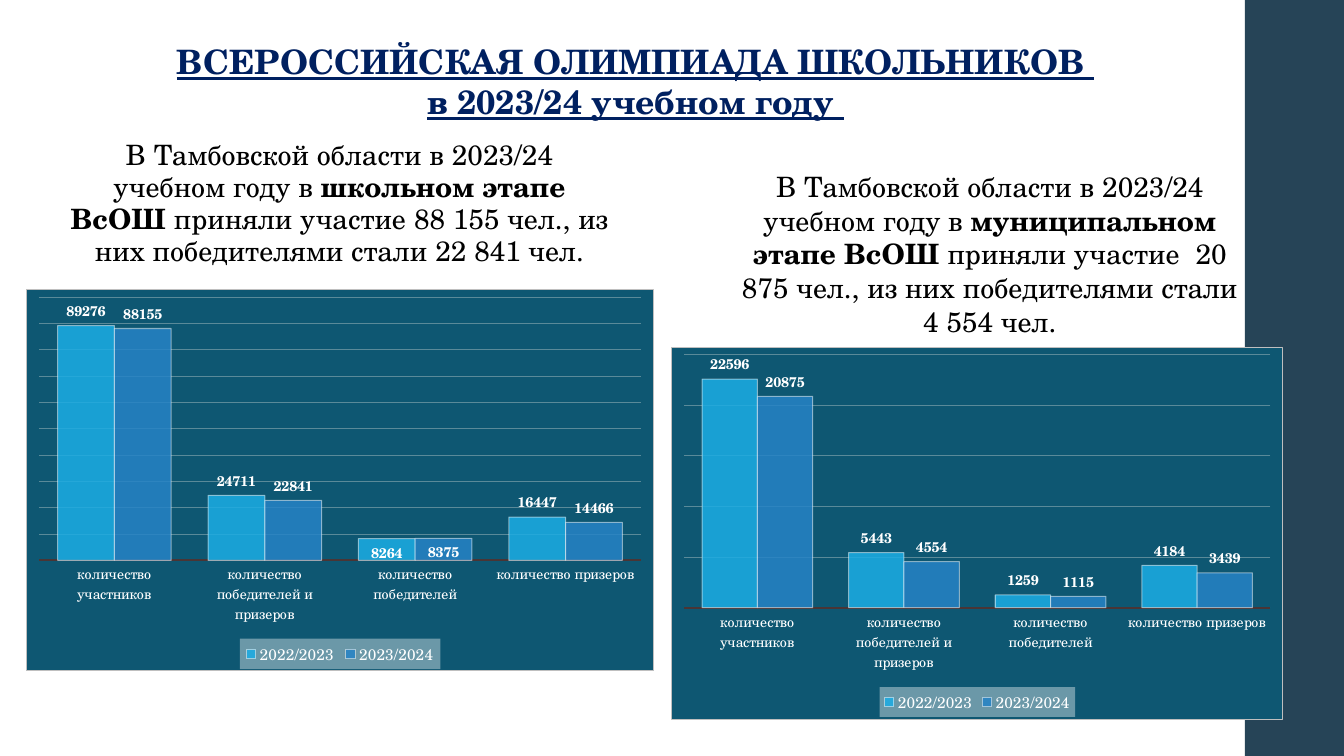
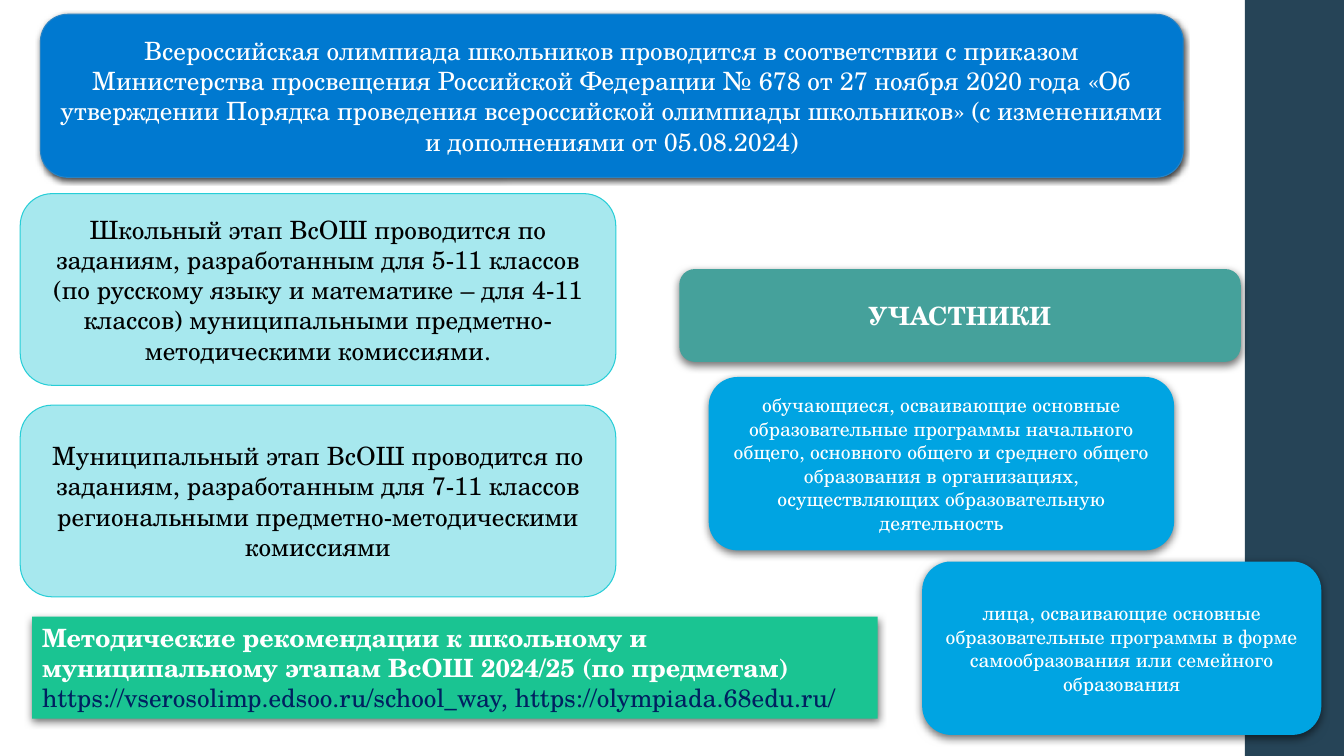
"""Build two slides about the school olympiad: results charts and the rules of the stages."""
from dataclasses import dataclass
from typing import Optional

from lxml.etree import SubElement
from pptx import Presentation
from pptx.chart.data import CategoryChartData
from pptx.dml.color import RGBColor
from pptx.enum.chart import XL_CHART_TYPE, XL_LABEL_POSITION, XL_LEGEND_POSITION, XL_TICK_MARK
from pptx.enum.shapes import MSO_SHAPE
from pptx.enum.text import MSO_ANCHOR, PP_ALIGN
from pptx.oxml import parse_xml
from pptx.oxml.ns import nsdecls, qn
from pptx.util import Cm, Pt

FONT = "TeX Gyre Schola"
WHITE, BLACK, NAVY = "FFFFFF", "000000", "002060"
BAND, PANEL, GRID, AXIS, BORDER = "264457", "0E5772", "5A8A99", "4A3535", "BFBFBF"
STAGE_FILL, STAGE_LINE = "A7E8EE", "27CED7"
ORDER_FILL, ORDER_LINE = "0079D0", "2683C6"
HEADING_FILL, GROUP_FILL, LINKS_FILL = "45A19B", "00A4E2", "1AC492"
SERIES_COLORS = ("1CADE4", "2683C6")
YEARS = ("2022/2023", "2023/2024")
CATEGORIES = (
    "количество участников",
    "количество победителей и призеров",
    "количество победителей",
    "количество призеров",
)


@dataclass(frozen=True)
class Area:
    """Place and size in centimetres."""
    left: float
    top: float
    width: float
    height: float

    def lengths(self):
        """Return the four values as lengths."""
        return Cm(self.left), Cm(self.top), Cm(self.width), Cm(self.height)


@dataclass(frozen=True)
class Span:
    """A run of text with one look."""
    text: str
    size: float = 18
    color: str = WHITE
    bold: bool = False
    underline: bool = False


@dataclass(frozen=True)
class Shadow:
    """A soft shadow that falls straight down, in points and percent."""
    opacity: int = 55
    blur: float = 6
    distance: float = 2


@dataclass(frozen=True)
class Card:
    """A filled shape with paragraphs of spans."""
    area: Area
    fill: str
    paragraphs: tuple = ()
    line: Optional[str] = None
    shadow: Optional[Shadow] = None
    shape: MSO_SHAPE = MSO_SHAPE.ROUNDED_RECTANGLE
    align: PP_ALIGN = PP_ALIGN.CENTER


@dataclass(frozen=True)
class Stage:
    """Results of one olympiad stage and the frame of its chart."""
    area: Area
    values: tuple
    maximum: int
    step: int
    plot_height: float
    inside: tuple = ()


def color(value: str) -> RGBColor:
    """Turn a hex string into a colour."""
    return RGBColor.from_string(value)


def style_font(font, size: float, value: str, bold: bool = False) -> None:
    """Set the face, size, colour and weight of a font."""
    font.name, font.size, font.bold = FONT, Pt(size), bold
    font.color.rgb = color(value)


def style_line(line, value: str, width: float = 0.75) -> None:
    """Set the colour and width of a line."""
    line.color.rgb = color(value)
    line.width = Pt(width)


def fade(element, percent: int) -> None:
    """Set the opacity of the solid fill directly inside an element."""
    tone = element.find(qn("a:solidFill")).find(qn("a:srgbClr"))
    SubElement(tone, qn("a:alpha")).set("val", str(percent * 1000))


def write(frame, paragraphs: tuple, align: PP_ALIGN = PP_ALIGN.CENTER) -> None:
    """Fill a text frame run by run."""
    frame.word_wrap = True
    for index, spans in enumerate(paragraphs):
        para = frame.add_paragraph() if index else frame.paragraphs[0]
        para.alignment = align
        for span in spans:
            run = para.add_run()
            run.text = span.text
            style_font(run.font, span.size, span.color, span.bold)
            run.font.underline = span.underline


def add_text(page, area: Area, paragraphs: tuple, anchor=MSO_ANCHOR.TOP, spacing: float = 1.0) -> None:
    """Add a centred text box."""
    frame = page.shapes.add_textbox(*area.lengths()).text_frame
    frame.vertical_anchor = anchor
    write(frame, paragraphs)
    for para in frame.paragraphs:
        para.line_spacing = spacing


def add_card(page, card: Card) -> None:
    """Draw a card with its outline, shadow and text."""
    box = page.shapes.add_shape(card.shape, *card.area.lengths())
    box.shadow.inherit = False
    box.fill.solid()
    box.fill.fore_color.rgb = color(card.fill)
    if card.line:
        style_line(box.line, card.line)
    else:
        box.line.fill.background()
    if card.shadow:
        effects = box._element.spPr.find(qn("a:effectLst"))
        outer = SubElement(effects, qn("a:outerShdw"), blurRad=str(Pt(card.shadow.blur)),
                           dist=str(Pt(card.shadow.distance)), dir="5400000", rotWithShape="0")
        tone = SubElement(outer, qn("a:srgbClr"), val=BLACK)
        SubElement(tone, qn("a:alpha"), val=str(card.shadow.opacity * 1000))
    box.text_frame.vertical_anchor = MSO_ANCHOR.MIDDLE
    write(box.text_frame, card.paragraphs, card.align)


def new_page(deck):
    """Add a blank page with the side band."""
    page = deck.slides.add_slide(deck.slide_layouts[6])
    add_card(page, Card(Area(31.37, 0, 2.5, 19.05), BAND, shape=MSO_SHAPE.RECTANGLE))
    return page


def place(element, index: int, left: float, top: float, width: float, height: float, inner: bool) -> None:
    """Give a chart part a fixed layout in fractions of the chart."""
    for old in element.findall(qn("c:layout")):
        element.remove(old)
    target = '<c:layoutTarget val="inner"/>' if inner else ""
    element.insert(index, parse_xml(
        f'<c:layout {nsdecls("c")}><c:manualLayout>{target}'
        '<c:xMode val="edge"/><c:yMode val="edge"/>'
        f'<c:x val="{left}"/><c:y val="{top}"/><c:w val="{width}"/><c:h val="{height}"/>'
        '</c:manualLayout></c:layout>'))


def filled(value: str, outline: str = ""):
    """Return chart shape properties with a solid fill."""
    return parse_xml(
        f'<c:spPr {nsdecls("c", "a")}><a:solidFill><a:srgbClr val="{value}"/></a:solidFill>{outline}</c:spPr>')


def style_series(series, value: str, inside: tuple) -> None:
    """Colour the columns and place their labels."""
    series.format.fill.solid()
    series.format.fill.fore_color.rgb = color(value)
    style_line(series.format.line, WHITE)
    properties = series._element.find(qn("c:spPr"))
    fade(properties, 85)
    fade(properties.find(qn("a:ln")), 50)
    labels = series.data_labels
    labels.show_value = True
    labels.position = XL_LABEL_POSITION.OUTSIDE_END
    style_font(labels.font, 10, WHITE, True)
    for index in inside:
        label = series.points[index].data_label
        style_font(label.font, 10, WHITE, True)
        label.position = XL_LABEL_POSITION.INSIDE_END


def add_results(page, stage: Stage) -> None:
    """Add the column chart of one stage."""
    data = CategoryChartData()
    data.categories = CATEGORIES
    for year, values in zip(YEARS, stage.values):
        data.add_series(year, values)
    chart = page.shapes.add_chart(XL_CHART_TYPE.COLUMN_CLUSTERED, *stage.area.lengths(), data).chart
    chart.has_title = False
    style_font(chart.font, 10, BLACK)
    plot = chart.plots[0]
    plot.gap_width, plot.overlap, plot.vary_by_categories = 65, 0, False
    for series, value in zip(plot.series, SERIES_COLORS):
        style_series(series, value, stage.inside)

    style_font(chart.category_axis.tick_labels.font, 10, WHITE)
    chart.category_axis.major_tick_mark = XL_TICK_MARK.NONE
    style_line(chart.category_axis.format.line, AXIS, 1.5)
    axis = chart.value_axis
    axis.minimum_scale, axis.maximum_scale, axis.major_unit = 0, stage.maximum, stage.step
    axis.has_major_gridlines = True
    style_line(axis.major_gridlines.format.line, GRID)
    axis.visible = False

    chart.has_legend = True
    legend = chart.legend
    legend.position = XL_LEGEND_POSITION.BOTTOM
    legend.include_in_layout = False
    style_font(legend.font, 11, WHITE)
    backing = filled(WHITE)
    fade(backing, 39)
    legend._element.find(qn("c:overlay")).addnext(backing)
    place(legend._element, 1, 0.34, 0.92, 0.32, 0.08, False)

    root = chart._chartSpace.find(qn("c:chart"))
    place(root.find(qn("c:plotArea")), 0, 0.02, 0.02, 0.96, stage.plot_height, True)
    outline = f'<a:ln w="{Pt(0.75)}"><a:solidFill><a:srgbClr val="{BORDER}"/></a:solidFill></a:ln>'
    root.addnext(filled(PANEL, outline))


def summary(stage: str, outcome: str) -> tuple:
    """Return the paragraph that sums up one stage."""
    return ((
        Span("В Тамбовской области в 2023/24 учебном году в ", 20, BLACK),
        Span(f"{stage} этапе ВсОШ ".replace("  ", " "), 20, BLACK, True),
        Span(outcome, 20, BLACK),
    ),)


def build_results(deck) -> None:
    """Build the page with the results of two stages."""
    page = new_page(deck)
    add_text(page, Area(1.52, 3.4, 14.07, 5.13), summary(
        "школьном", "приняли участие 88 155 чел., из них победителями стали 22 841 чел."), spacing=0.95)
    lines = ("ВСЕРОССИЙСКАЯ ОЛИМПИАДА ШКОЛЬНИКОВ ", "в 2023/24 учебном году ")
    add_text(page, Area(0.51, 0.91, 31.01, 2.31), tuple((Span(line, 24, NAVY, True, True),) for line in lines))
    add_text(page, Area(18.34, 4.04, 13.21, 4.7), summary(
        "муниципальном", "приняли участие  20 875 чел., из них победителями стали 4 554 чел."), MSO_ANCHOR.MIDDLE)
    add_results(page, Stage(Area(0.66, 7.29, 15.82, 9.63),
                            ((89276, 24711, 8264, 16447), (88155, 22841, 8375, 14466)),
                            100000, 10000, 0.69, (2,)))
    add_results(page, Stage(Area(16.92, 8.74, 15.42, 9.4),
                            ((22596, 5443, 1259, 4184), (20875, 4554, 1115, 3439)),
                            25000, 5000, 0.68))


def build_rules(deck) -> None:
    """Build the page with the rules and the participants."""
    page = new_page(deck)
    add_card(page, Card(Area(1.02, 0.36, 28.8, 4.11), ORDER_FILL, ((Span(
        "Всероссийская олимпиада школьников проводится в соответствии с приказом Министерства просвещения "
        "Российской Федерации № 678 от 27 ноября 2020 года «Об утверждении Порядка проведения всероссийской "
        "олимпиады школьников» (с изменениями и дополнениями от 05.08.2024)"),),), ORDER_LINE, Shadow(75, 4, 1.2)))
    stages = (
        "Школьный этап ВсОШ проводится по заданиям, разработанным для 5-11 классов (по русскому языку и "
        "математике – для 4-11 классов) муниципальными предметно-методическими комиссиями.",
        "Муниципальный этап ВсОШ проводится по заданиям, разработанным для 7-11 классов региональными "
        "предметно-методическими комиссиями",
    )
    for index, text in enumerate(stages):
        add_card(page, Card(Area(0.51, 4.88 + index * 5.33, 15.01, 4.83), STAGE_FILL,
                            ((Span(text, color=BLACK),),), STAGE_LINE))
    add_card(page, Card(Area(17.12, 6.78, 14.15, 2.34), HEADING_FILL,
                        ((Span("УЧАСТНИКИ", bold=True),),), shadow=Shadow()))
    groups = (
        (Area(23.24, 14.15, 10.06, 4.37), "лица, осваивающие основные образовательные программы в форме "
         "самообразования или семейного образования"),
        (Area(17.86, 9.5, 11.73, 4.37), "обучающиеся, осваивающие основные образовательные программы начального "
         "общего, основного общего и среднего общего образования в организациях, осуществляющих "
         "образовательную деятельность"),
    )
    for area, text in groups:
        add_card(page, Card(area, GROUP_FILL, ((Span(text, 14),),), shadow=Shadow()))
    add_card(page, Card(Area(0.81, 15.54, 21.31, 2.57), LINKS_FILL, (
        (Span("Методические рекомендации к школьному и муниципальному этапам ВсОШ 2024/25 (по предметам)", bold=True),),
        (Span("https://vserosolimp.edsoo.ru/school_way, https://olympiada.68edu.ru/", color=NAVY),),
    ), shadow=Shadow(), shape=MSO_SHAPE.RECTANGLE, align=PP_ALIGN.LEFT))


def main() -> None:
    """Build and save the deck."""
    deck = Presentation()
    deck.slide_width, deck.slide_height = Cm(33.87), Cm(19.05)
    build_results(deck)
    build_rules(deck)
    deck.save("out.pptx")


if __name__ == "__main__":
    main()
